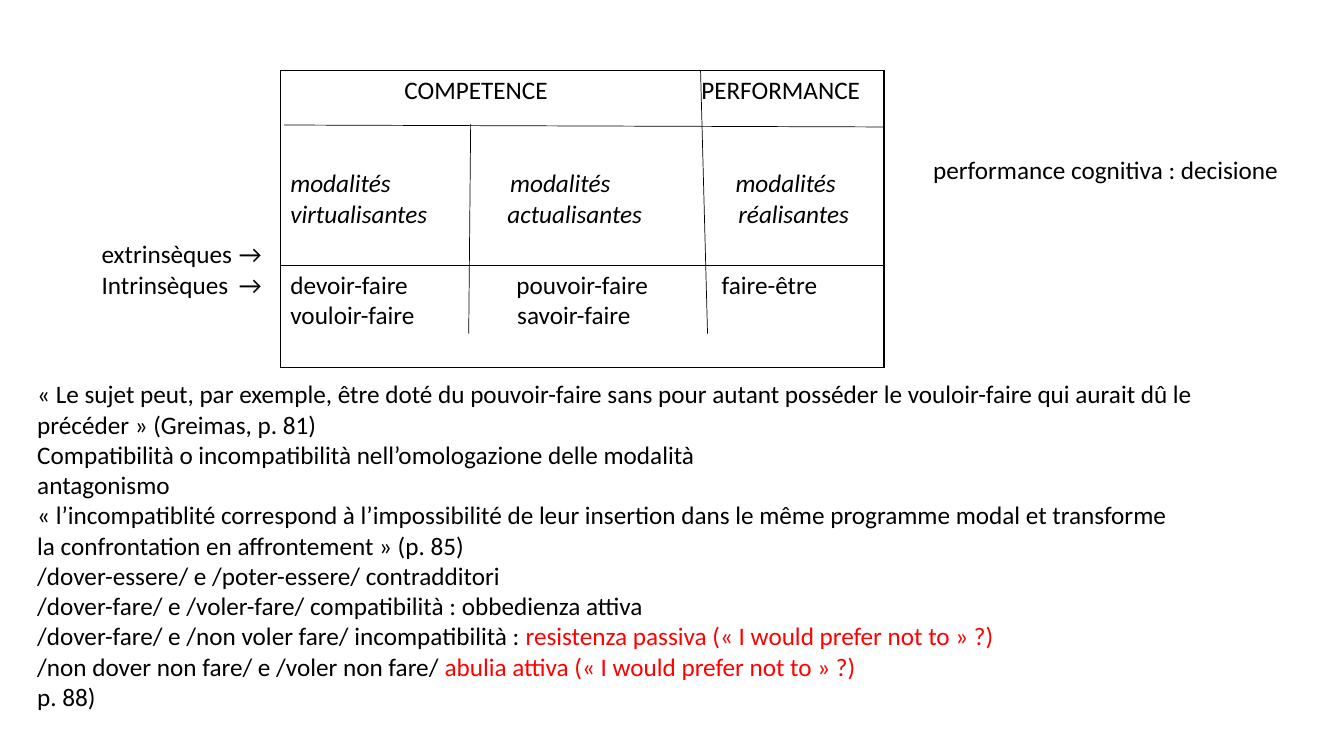
"""Build the slide on the modalities of competence and performance."""
import lxml.etree
import pptx
import pptx.dml.color
import pptx.enum.shapes
import pptx.enum.text
import pptx.oxml
import pptx.oxml.ns
import pptx.util

Pt = pptx.util.Pt
qn = pptx.oxml.ns.qn

COLORS = {"ink": "000000", "accent": "FF0000"}
FONT = "Calibri"
SIZE = 18

HEADING_ROW = [
    {"text": "\tCOMPETENCE\tPERFORMANCE", "tabs": (81.5, 293.5)},
    {"text": "modalités\tmodalités\tmodalités", "tabs": (157, 318), "italic": True, "before": 44.5},
    {"text": "virtualisantes\tactualisantes\tréalisantes", "tabs": (155, 320), "italic": True},
]
VERB_ROW = [
    {"text": "devoir-faire\tpouvoir-faire\tfaire-être", "tabs": (161.5, 308)},
    {"text": "vouloir-faire\tsavoir-faire", "tabs": (162,)},
]
DIVIDERS = [
    (203, 89.3, 631.5, 90.7),
    (336.2, 88.6, 334.8, 238.3),
    (500.4, 50.4, 505.4, 238.3),
]
NOTES = [
    {"text": "« Le sujet peut, par exemple, être doté du pouvoir-faire sans pour autant posséder "
             "le vouloir-faire qui aurait dû le précéder » (Greimas, p. 81)"},
    {"text": "Compatibilità o incompatibilità nell’omologazione delle modalità"},
    {"text": "antagonismo"},
    {"text": "« l’incompatiblité correspond à l’impossibilité de leur insertion dans le même "
             "programme modal et transforme"},
    {"text": "la confrontation en affrontement » (p. 85)"},
    {"text": "/dover-essere/ e /poter-essere/ contradditori"},
    {"text": "/dover-fare/ e /voler-fare/ compatibilità : obbedienza attiva"},
    {"text": "/dover-fare/ e /non voler fare/ incompatibilità : ",
     "accent": "resistenza passiva (« I would prefer not to » ?)"},
    {"text": "/non dover non fare/ e /voler non fare/ ",
     "accent": "abulia attiva (« I would prefer not to » ?)"},
    {"text": "p. 88)"},
]
ROW_LABELS = [
    {"text": "extrinsèques\t→", "tabs": (98,)},
    {"text": "Intrinsèques\t→", "tabs": (98,)},
]
SIDE_NOTE = [{"text": "performance cognitiva : decisione"}]


def rgb(name):
    """Return the named colour."""
    return pptx.dml.color.RGBColor.from_string(COLORS[name])


def add_run(paragraph, text, color="ink", italic=False):
    """Add one formatted run."""
    run = paragraph.add_run()
    run.text = text
    run.font.name = FONT
    run.font.size = Pt(SIZE)
    run.font.bold = False
    run.font.italic = italic
    run.font.color.rgb = rgb(color)


def set_tabs(paragraph, positions):
    """Give a paragraph left tab stops."""
    properties = paragraph._p.get_or_add_pPr()
    tab_list = lxml.etree.SubElement(properties, qn("a:tabLst"))
    for position in positions:
        lxml.etree.SubElement(tab_list, qn("a:tab"), pos=str(int(Pt(position))), algn="l")


def fill_text(text_frame, lines):
    """Write the lines as paragraphs."""
    for index, line in enumerate(lines):
        paragraph = text_frame.add_paragraph() if index else text_frame.paragraphs[0]
        if "before" in line:
            paragraph.space_before = Pt(line["before"])
        if "tabs" in line:
            set_tabs(paragraph, line["tabs"])
        add_run(paragraph, line["text"], italic=line.get("italic", False))
        if "accent" in line:
            add_run(paragraph, line["accent"], "accent")


def add_text(slide, left, top, width, height, lines, wrap=True):
    """Add a text box."""
    shape = slide.shapes.add_textbox(Pt(left), Pt(top), Pt(width), Pt(height))
    shape.text_frame.word_wrap = wrap
    shape.text_frame.auto_size = pptx.enum.text.MSO_AUTO_SIZE.SHAPE_TO_FIT_TEXT
    fill_text(shape.text_frame, lines)


def set_borders(cell):
    """Draw a thin line on every side of a cell."""
    properties = cell._tc.get_or_add_tcPr()
    for index, side in enumerate(("lnL", "lnR", "lnT", "lnB")):
        border = lxml.etree.Element(qn(f"a:{side}"), w=str(int(Pt(1))))
        fill = lxml.etree.SubElement(border, qn("a:solidFill"))
        lxml.etree.SubElement(fill, qn("a:srgbClr"), val=COLORS["ink"])
        properties.insert(index, border)


def add_modality_table(slide, left, top, width, rows):
    """Add the one-column table from pairs of height and lines."""
    total = sum(height for height, lines in rows)
    table = slide.shapes.add_table(len(rows), 1, Pt(left), Pt(top), Pt(width), Pt(total)).table
    table.first_row = False
    table.horz_banding = False
    for index, (height, lines) in enumerate(rows):
        table.rows[index].height = Pt(height)
        cell = table.cell(index, 0)
        cell.fill.background()
        set_borders(cell)
        fill_text(cell.text_frame, lines)


def add_divider(slide, x1, y1, x2, y2):
    """Add a hairline between two points."""
    connector = slide.shapes.add_connector(
        pptx.enum.shapes.MSO_CONNECTOR.STRAIGHT, Pt(x1), Pt(y1), Pt(x2), Pt(y2))
    connector.line.color.rgb = rgb("ink")
    connector.line.width = Pt(0.5)
    lxml.etree.SubElement(connector._element.spPr, qn("a:effectLst"))


def main():
    """Build and save the presentation."""
    presentation = pptx.Presentation()
    presentation.slide_width = Pt(960)
    presentation.slide_height = Pt(540)
    slide = presentation.slides.add_slide(presentation.slide_layouts[6])
    add_modality_table(slide, 200.2, 50.4, 431.3, [(139, HEADING_ROW), (73, VERB_ROW)])
    for divider in DIVIDERS:
        add_divider(slide, *divider)
    add_text(slide, 19.5, 267, 841, 247, NOTES)
    add_text(slide, 65.5, 167, 134.6, 51, ROW_LABELS)
    add_text(slide, 659.5, 107, 263.5, 29, SIDE_NOTE, wrap=False)
    presentation.save("out.pptx")


if __name__ == "__main__":
    main()
